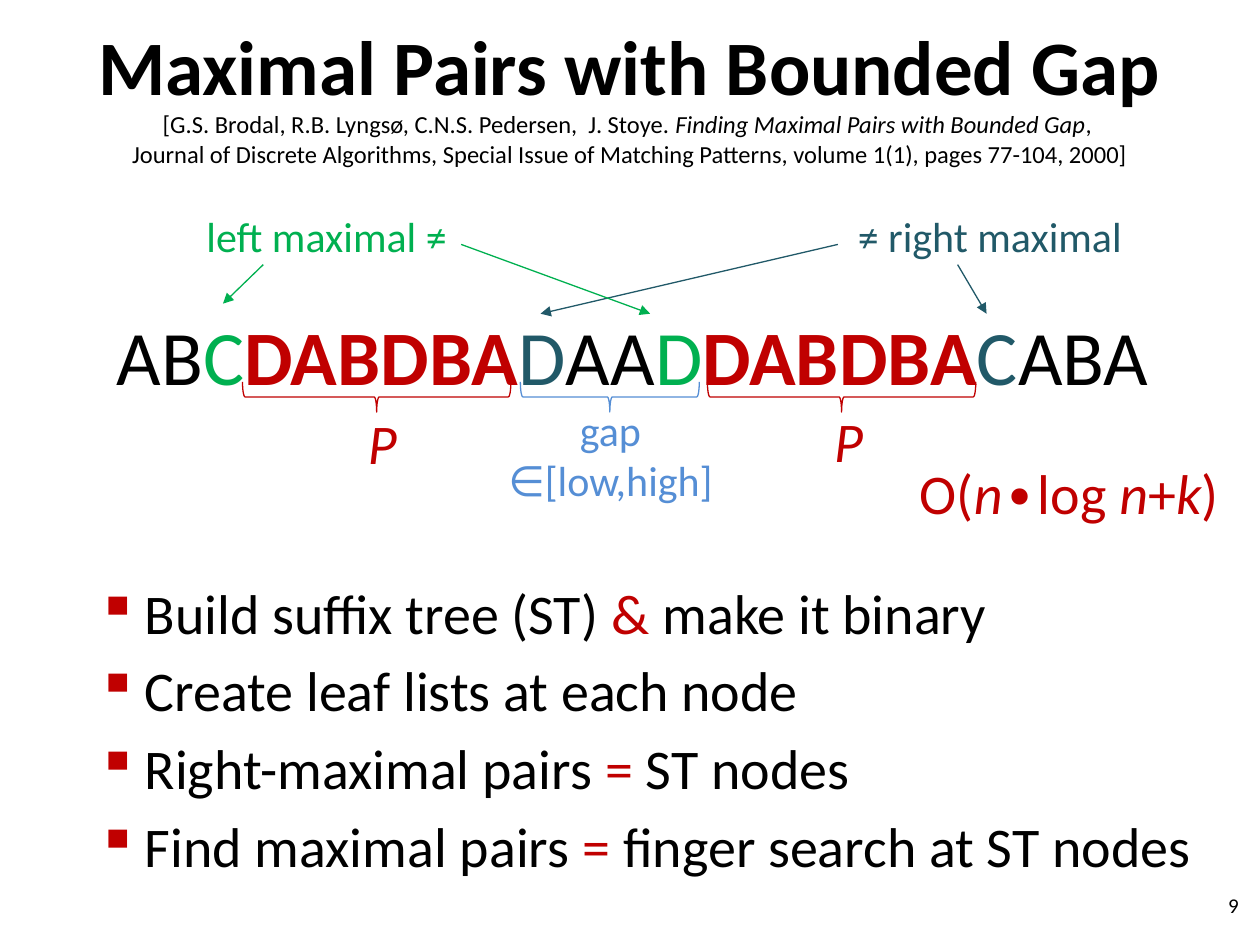
from lxml.etree import SubElement
from pptx import Presentation
from pptx.dml.color import RGBColor
from pptx.enum.shapes import MSO_CONNECTOR, MSO_SHAPE
from pptx.enum.text import MSO_ANCHOR, PP_ALIGN
from pptx.oxml.ns import qn
from pptx.util import Inches, Pt

BLACK, RED, GREEN = "000000", "C00000", "00B050"
TEAL, BLUE = "215968", "558ED5"
LEFT, MID, RIGHT = PP_ALIGN.LEFT, PP_ALIGN.CENTER, PP_ALIGN.RIGHT

# Content: runs are (text, colour, style), style "b" bold or "i" italic
TITLE = [("Maximal Pairs with Bounded Gap", BLACK, "b")]
SOURCE = [
    ("[G.S. Brodal, R.B. Lyngsø, C.N.S. Pedersen,  J. Stoye. ", BLACK, ""),
    ("Finding Maximal Pairs with Bounded Gap", BLACK, "i"),
    (", \nJournal of Discrete Algorithms, Special Issue of Matching Patterns, "
     "volume 1(1), pages 77-104, 2000]", BLACK, ""),
]
STRING = [
    ("AB", BLACK, ""), ("C", GREEN, ""), ("DABDBA", RED, "b"),
    ("D", TEAL, ""), ("AA", BLACK, ""), ("D", GREEN, ""),
    ("DABDBA", RED, "b"), ("C", TEAL, ""), ("ABA", BLACK, ""),
]
TIME = [
    ("O(", RED, ""), ("n", RED, "i"), ("∙log ", RED, ""), ("n", RED, "i"),
    ("+", RED, ""), ("k", RED, "i"), (")", RED, ""),
]
STEPS = [
    [("Build suffix tree (ST) ", BLACK, ""), ("& ", RED, ""),
     ("make it binary", BLACK, "")],
    [("Create leaf lists at each node", BLACK, "")],
    [("Right-maximal pairs ", BLACK, ""), ("=", RED, ""),
     (" ST nodes", BLACK, "")],
    [("Find maximal pairs ", BLACK, ""), ("=", RED, ""),
     (" finger search at ST nodes", BLACK, "")],
]
# Labels: box, text, colour, style, size, alignment
LABELS = [
    ((2.64, 3.19, 0.79, 0.64), "P", RED, "i", 32, MID),
    ((6.34, 3.18, 0.79, 0.64), "P", RED, "i", 32, MID),
    ((3.19, 3.16, 3.31, 0.91), "gap\n∈[low,high]", BLUE, "", 24, MID),
    ((6.71, 1.62, 3.02, 0.5), "≠ right maximal", TEAL, "", 24, LEFT),
    ((1.54, 1.62, 3.02, 0.5), "left maximal ≠", GREEN, "", 24, LEFT),
]
# Braces: centre, span, colour
BRACES = [(2.99, 2.13, RED), (6.68, 2.13, RED), (4.84, 1.42, BLUE)]
# Arrows: from, to, colour
ARROWS = [
    ((7.6, 2.1), (7.83, 2.49), TEAL),
    ((6.65, 1.94), (4.29, 2.49), TEAL),
    ((3.66, 1.94), (5.16, 2.49), GREEN),
    ((2.09, 2.1), (1.77, 2.41), GREEN),
]
BRACE_Y, DEPTH, HANG = 3.15, 0.24, 0.38

deck = Presentation()
deck.slide_width, deck.slide_height = Inches(10), Inches(7.5)
slide = deck.slides.add_slide(deck.slide_layouts[6])
shapes = slide.shapes


def color(code):
    return RGBColor.from_string(code)


def add_text(box, paras, size, align=MID, anchor=MSO_ANCHOR.TOP,
             hang=False, bullet=False):
    frame = shapes.add_textbox(*map(Inches, box)).text_frame
    frame.word_wrap = True
    frame.vertical_anchor = anchor
    for k, runs in enumerate(paras):
        para = frame.add_paragraph() if k else frame.paragraphs[0]
        para.alignment = align
        para.font.name, para.font.size = "Calibri", Pt(size)
        if hang:
            para.space_before = Pt(round(size * 0.19))
            props = para._p.get_or_add_pPr()
            props.set("marL", str(Inches(HANG)))
            props.set("indent", str(-Inches(HANG)))
        if bullet:
            mark(props)
        for text, code, style in runs:
            for n, line in enumerate(text.split("\n")):
                if n:
                    para.add_line_break()
                run = para.add_run()
                run.text = line
                run.font.color.rgb = color(code)
                if style == "b":
                    run.font.bold = True
                elif style == "i":
                    run.font.italic = True


def mark(props):
    # Bullet tags come before the default run properties
    tint = SubElement(props, qn("a:buClr"))
    SubElement(tint, qn("a:srgbClr"), val=RED)
    char = SubElement(props, qn("a:buChar"), char="▪")
    font = props.find(qn("a:defRPr"))
    font.addprevious(tint)
    font.addprevious(char)


def add_brace(mid, span, code):
    # Upright brace, turned so that its point faces down
    brace = shapes.add_shape(
        MSO_SHAPE.LEFT_BRACE, Inches(mid - DEPTH / 2),
        Inches(BRACE_Y - span / 2), Inches(DEPTH), Inches(span))
    brace.rotation = 270
    brace.shadow.inherit = False
    brace.fill.background()
    brace.line.color.rgb = color(code)
    brace.line.width = Pt(0.75)


def add_arrow(start, end, code):
    arrow = shapes.add_connector(
        MSO_CONNECTOR.STRAIGHT, *map(Inches, start + end))
    arrow.line.color.rgb = color(code)
    arrow.line.width = Pt(0.75)
    SubElement(arrow.line._get_or_add_ln(), qn("a:tailEnd"), type="triangle")
    SubElement(arrow._element.spPr, qn("a:effectLst"))


# Heading
add_text((0.5, -0.11, 9, 1.25), [TITLE], 44, anchor=MSO_ANCHOR.MIDDLE)
add_text((0, 0.82, 10, 0.63), [SOURCE], 14)

# String with its braces, labels and arrows
add_text((0.52, 2.4, 9, 0.82), [STRING], 44, hang=True)
for brace in BRACES:
    add_brace(*brace)
for box, text, code, style, size, align in LABELS:
    add_text(box, [[(text, code, style)]], size, align)
for arrow in ARROWS:
    add_arrow(*arrow)

# Steps, running time and page number
add_text((0.67, 4.54, 9.06, 2.6), STEPS, 32, LEFT, hang=True, bullet=True)
add_text((7.13, 3.59, 2.64, 0.71), [TIME], 32, RIGHT, hang=True)
add_text((7.6, 6.98, 2.33, 0.4), [[("9", BLACK, "")]], 12, RIGHT,
         MSO_ANCHOR.MIDDLE)

deck.save("out.pptx")
